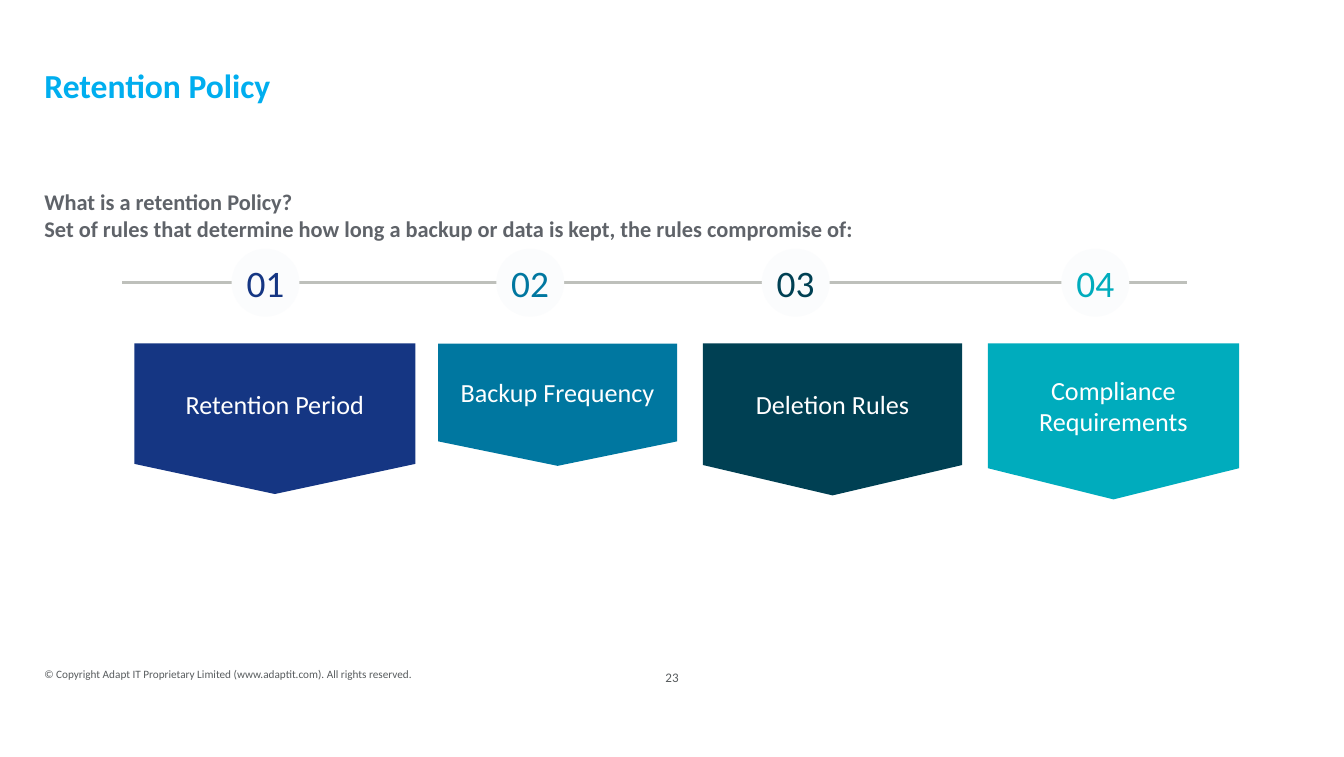
from dataclasses import dataclass

from pptx import Presentation
from pptx.dml.color import RGBColor
from pptx.enum.shapes import MSO_CONNECTOR, MSO_SHAPE
from pptx.enum.text import MSO_ANCHOR, MSO_AUTO_SIZE, PP_ALIGN
from pptx.oxml.ns import qn
from pptx.util import Inches, Pt

OVAL = MSO_SHAPE.OVAL
BANNER = MSO_SHAPE.FLOWCHART_OFFPAGE_CONNECTOR
STRAIGHT = MSO_CONNECTOR.STRAIGHT
TOP, MIDDLE = MSO_ANCHOR.TOP, MSO_ANCHOR.MIDDLE
LEFT, CENTER = PP_ALIGN.LEFT, PP_ALIGN.CENTER
NO_AUTOFIT = MSO_AUTO_SIZE.NONE


@dataclass(frozen=True)
class Theme:
    font: str = "Calibri"
    title: str = "00AEEF"
    body: str = "5F6369"
    footer: str = "585C5E"
    rail: str = "BEC0BB"
    disc: str = "FBFCFD"
    on_banner: str = "FFFFFF"
    title_size: float = 18
    body_size: float = 12
    number_size: float = 20
    banner_size: float = 14
    copyright_size: float = 6
    page_size: float = 7


@dataclass(frozen=True)
class Box:
    left: int
    top: int
    width: int
    height: int

    def inner(self, left, top, width, height):
        """Inner box, with its place and size in percent of this one."""
        return Box(int(self.left + self.width * left / 100),
                   int(self.top + self.height * top / 100),
                   int(self.width * width / 100),
                   int(self.height * height / 100))

    @property
    def bounds(self):
        return self.left, self.top, self.width, self.height


@dataclass(frozen=True)
class Step:
    """One rule; its measures are percent of the region that holds it."""
    label: str
    color: str
    disc_center: float
    banner_left: float
    banner_width: float
    banner_height: float


THEME = Theme()
STEPS = [
    Step("Retention Period", "153683", 13.45, 0, 25.43, 96.55),
    Step("Backup Frequency", "0077A0", 38.32, 27.49, 21.65, 78.45),
    Step("Deletion Rules", "004053", 63.26, 51.46, 23.48, 97.41),
    Step("Compliance Requirements", "00ACBD", 91.41, 77.25, 22.75, 100),
]


def rgb(color):
    return RGBColor.from_string(color)


def write(shape, text, size, color, bold=False, align=CENTER, anchor=MIDDLE,
          inset=0, wrap=True, line_spacing=None):
    frame = shape.text_frame
    frame.text = text
    frame.auto_size = NO_AUTOFIT
    frame.word_wrap = wrap
    frame.vertical_anchor = anchor
    frame.margin_left = frame.margin_right = Inches(inset)
    frame.margin_top = frame.margin_bottom = Inches(inset)
    for paragraph in frame.paragraphs:
        paragraph.alignment = align
        paragraph.space_before = Pt(0)
        if line_spacing:
            paragraph.line_spacing = Pt(line_spacing)
        for run in paragraph.runs:
            run.font.name = THEME.font
            run.font.size = Pt(size)
            run.font.bold = bold
            run.font.color.rgb = rgb(color)


def place(shape, box):
    shape.left, shape.top, shape.width, shape.height = box.bounds


def add_filled(slide, kind, box, color):
    shape = slide.shapes.add_shape(kind, *box.bounds)
    shape.shadow.inherit = False
    shape.fill.solid()
    shape.fill.fore_color.rgb = rgb(color)
    shape.line.fill.background()
    return shape


def add_title(slide, box, text):
    title = slide.shapes.title
    place(title, box)
    write(title, text, THEME.title_size, THEME.title, bold=True, align=LEFT,
          line_spacing=22.6)


def add_introduction(slide, box, text):
    body = slide.placeholders[1]
    place(body, box)
    write(body, text, THEME.body_size, THEME.body, bold=True, align=LEFT,
          anchor=TOP, line_spacing=14.4)
    properties = body.text_frame.paragraphs[0]._p.get_or_add_pPr()
    properties.set("marL", "0")
    properties.set("indent", "0")
    properties.append(properties.makeelement(qn("a:buNone"), {}))


def add_timeline(slide, box, steps):
    middle = box.top + box.height // 2
    rail = slide.shapes.add_connector(
        STRAIGHT, box.left, middle, box.left + box.width, middle)
    rail.line.color.rgb = rgb(THEME.rail)
    rail.line.width = Pt(1.5)
    properties = rail._element.spPr
    properties.append(properties.makeelement(qn("a:effectLst"), {}))

    diameter = 100 * box.height / box.width
    for number, step in enumerate(steps, start=1):
        disc_box = box.inner(step.disc_center - diameter / 2, 0, diameter, 100)
        disc = add_filled(slide, OVAL, disc_box, THEME.disc)
        write(disc, f"{number:02}", THEME.number_size, step.color, wrap=False)


def add_banners(slide, box, steps):
    for step in steps:
        banner_box = box.inner(step.banner_left, 0, step.banner_width,
                               step.banner_height)
        banner = add_filled(slide, BANNER, banner_box, step.color)
        write(banner, step.label, THEME.banner_size, THEME.on_banner, inset=0.1)


def add_footer(slide, box, copyright_line, page_number):
    notice = slide.shapes.add_textbox(*box.inner(0, 0, 37, 88.5).bounds)
    write(notice, copyright_line, THEME.copyright_size, THEME.footer,
          align=LEFT, wrap=False)
    page = slide.shapes.add_textbox(*box.inner(42.66, 0, 14.79, 100).bounds)
    write(page, page_number, THEME.page_size, THEME.footer)


def main():
    deck = Presentation()
    deck.slide_width, deck.slide_height = Inches(10), Inches(5.63)
    slide = deck.slides.add_slide(deck.slide_layouts[1])
    page = Box(0, 0, deck.slide_width, deck.slide_height)

    add_title(slide, page.inner(3.3, 6.39, 93.3, 9.41), "Retention Policy")
    add_introduction(
        slide, page.inner(3.3, 24.87, 93.3, 52.4),
        "What is a retention Policy?\vSet of rules that determine how long "
        "a backup or data is kept, the rules compromise of:")
    add_timeline(slide, page.inner(9.1, 32.86, 79.2, 8.97), STEPS)
    add_banners(slide, page.inner(10, 45.38, 82.2, 20.6), STEPS)
    add_footer(slide, page.inner(3.3, 84.9, 93.3, 9.24),
               "© Copyright Adapt IT Proprietary Limited (www.adaptit.com). "
               "All rights reserved.", "23")
    deck.save("out.pptx")


if __name__ == "__main__":
    main()
